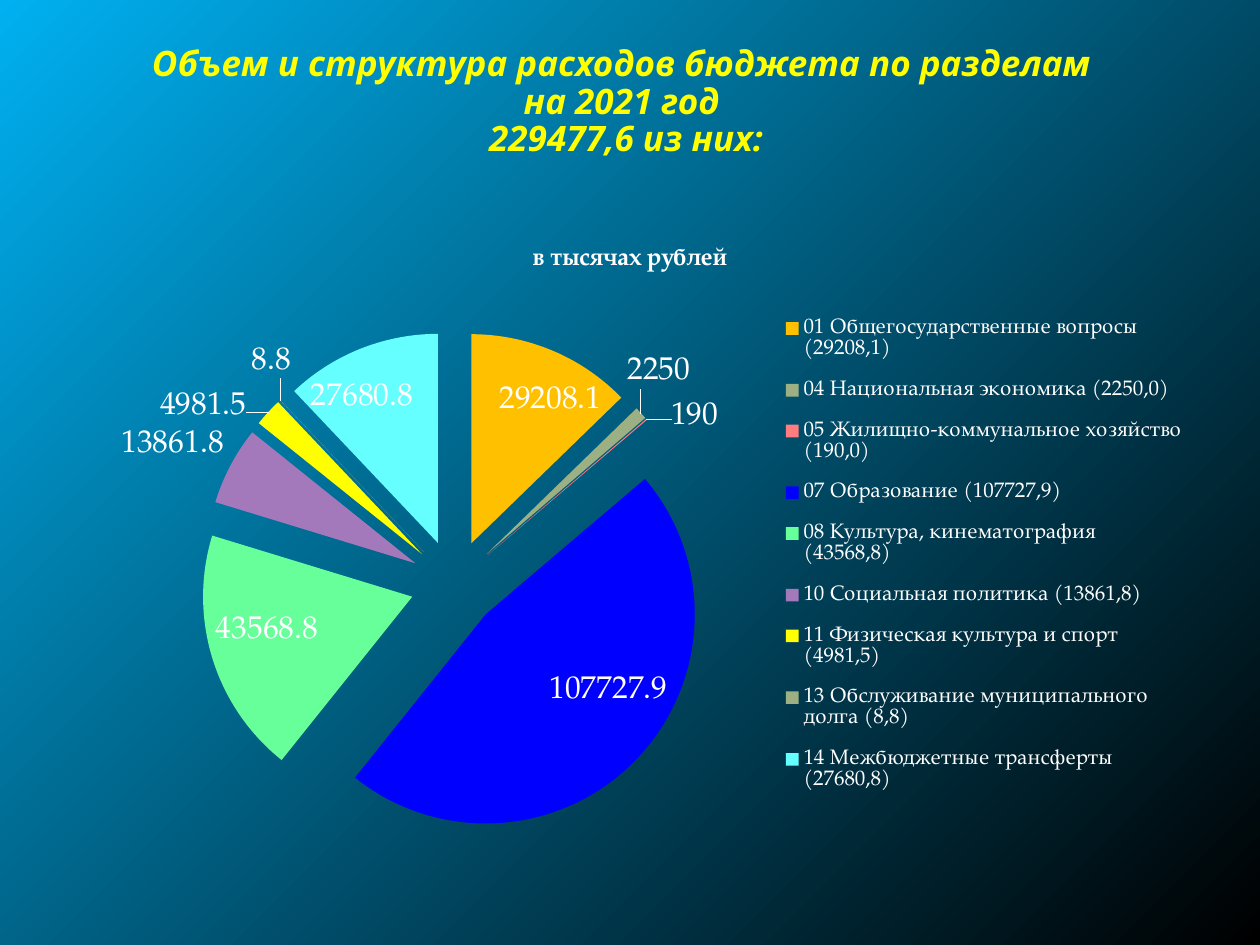
from lxml.etree import SubElement
from pptx import Presentation
from pptx.chart.data import CategoryChartData
from pptx.dml.color import RGBColor
from pptx.enum.chart import XL_CHART_TYPE as CT, XL_LABEL_POSITION as LP, XL_LEGEND_POSITION as LG
from pptx.enum.text import MSO_ANCHOR, MSO_AUTO_SIZE, PP_ALIGN
from pptx.oxml.ns import qn
from pptx.util import Inches, Pt

TITLE = "Объем и структура расходов бюджета по разделам \vна 2021 год \v229477,6 из них:"
UNIT = "в тысячах рублей"
SECTIONS = [
    ("01 Общегосударственные вопросы (29208,1)", 29208.1, "FFC000"),
    ("04 Национальная экономика (2250,0)", 2250, "9CB084"),
    ("05 Жилищно-коммунальное хозяйство (190,0)", 190, "FF7C80"),
    ("07 Образование (107727,9)", 107727.9, "0000FF"),
    ("08 Культура, кинематография (43568,8)", 43568.8, "66FF99"),
    ("10 Социальная политика (13861,8)", 13861.8, "A379BB"),
    ("11 Физическая культура и спорт (4981,5)", 4981.5, "FFFF00"),
    ("13 Обслуживание муниципального долга (8,8)", 8.8, "9CB084"),
    ("14 Межбюджетные трансферты (27680,8)", 27680.8, "66FFFF"),
]
BODY, WHITE = "TeX Gyre Pagella", "FFFFFF"
THEME = {
    "background": ("00B0F0", "000000"),
    "title": {"name": "Open Sans", "size": 20, "color": "FFFF00", "bold": True, "italic": True},
    "chart": {"name": BODY, "size": 18, "color": WHITE},
    "chart_title": {"name": BODY, "size": 14, "color": WHITE, "bold": True},
    "legend": {"name": BODY, "size": 12, "color": WHITE},
}
PLOT_BOX = (0.12, 0.17, 0.45, 0.78)
LEGEND_BOX = (0.64, 0.12, 0.35, 0.79)
EXPLOSION = 21


def style(font, fmt):
    for key, value in fmt.items():
        if key == "color":
            font.color.rgb = RGBColor.from_string(value)
        else:
            setattr(font, key, Pt(value) if key == "size" else value)


def set_layout(parent, index, box, inner=False):
    for old in parent.findall(qn("c:layout")):
        parent.remove(old)
    layout = parent.makeelement(qn("c:layout"))
    parent.insert(index, layout)
    manual = SubElement(layout, qn("c:manualLayout"))
    parts = [("layoutTarget", "inner")] if inner else []
    parts += [("xMode", "edge"), ("yMode", "edge"), *zip("xywh", box)]
    for tag, value in parts:
        SubElement(manual, qn(f"c:{tag}")).set("val", str(value))


def set_background(slide):
    fill = slide.background.fill
    fill.gradient()
    for stop, color, pos in zip(fill.gradient_stops, THEME["background"], (0, 1)):
        stop.color.rgb = RGBColor.from_string(color)
        stop.position = pos
    grad = slide.background._cSld.find(".//" + qn("a:gradFill"))
    grad.remove(grad.find(qn("a:lin")))
    radial = SubElement(grad, qn("a:path"))
    radial.set("path", "circle")
    rect = SubElement(radial, qn("a:fillToRect"))
    for side in "rb":
        rect.set(side, "100000")


def add_title(slide):
    sp = slide.shapes.title
    sp.left, sp.top, sp.width, sp.height = map(Inches, (0.47, 0.23, 9, 1.17))
    tf = sp.text_frame
    tf.text = TITLE
    tf.word_wrap, tf.auto_size = True, MSO_AUTO_SIZE.NONE
    tf.vertical_anchor = MSO_ANCHOR.MIDDLE
    p = tf.paragraphs[0]
    p.alignment, p.line_spacing = PP_ALIGN.CENTER, 0.9
    for r in p.runs:
        style(r.font, THEME["title"])


def add_pie(slide):
    names, values, colors = zip(*SECTIONS)
    data = CategoryChartData()
    data.categories = names
    data.add_series(UNIT, values)
    chart = slide.shapes.add_chart(CT.PIE, *map(Inches, (0.5, 1.75, 9, 5.15)), data).chart
    style(chart.font, THEME["chart"])

    chart.has_title = True
    p = chart.chart_title.text_frame.paragraphs[0]
    r = p.add_run()
    r.text = UNIT
    style(r.font, THEME["chart_title"])

    chart.has_legend = True
    legend = chart.legend
    legend.position, legend.include_in_layout = LG.RIGHT, False
    style(legend.font, THEME["legend"])
    set_layout(legend._element, 1, LEGEND_BOX)

    plot = chart.plots[0]
    plot.vary_by_categories = True
    series = plot.series[0]
    for i, color in enumerate(colors):
        fill = series.points[i].format.fill
        fill.solid()
        fill.fore_color.rgb = RGBColor.from_string(color)
    ser = series._element
    explosion = ser.makeelement(qn("c:explosion"), {"val": str(EXPLOSION)})
    ser.find(qn("c:dPt")).addprevious(explosion)
    labels = series.data_labels
    labels.show_value, labels.position = True, LP.BEST_FIT
    labels.number_format, labels.number_format_is_linked = "General", False
    style(labels.font, THEME["chart"])
    set_layout(chart._chartSpace.chart.plotArea, 0, PLOT_BOX, inner=True)


def main():
    prs = Presentation()
    prs.slide_width, prs.slide_height = Inches(10), Inches(7.5)
    slide = prs.slides.add_slide(prs.slide_layouts[5])
    set_background(slide)
    add_title(slide)
    add_pie(slide)
    prs.save("out.pptx")


if __name__ == "__main__":
    main()
